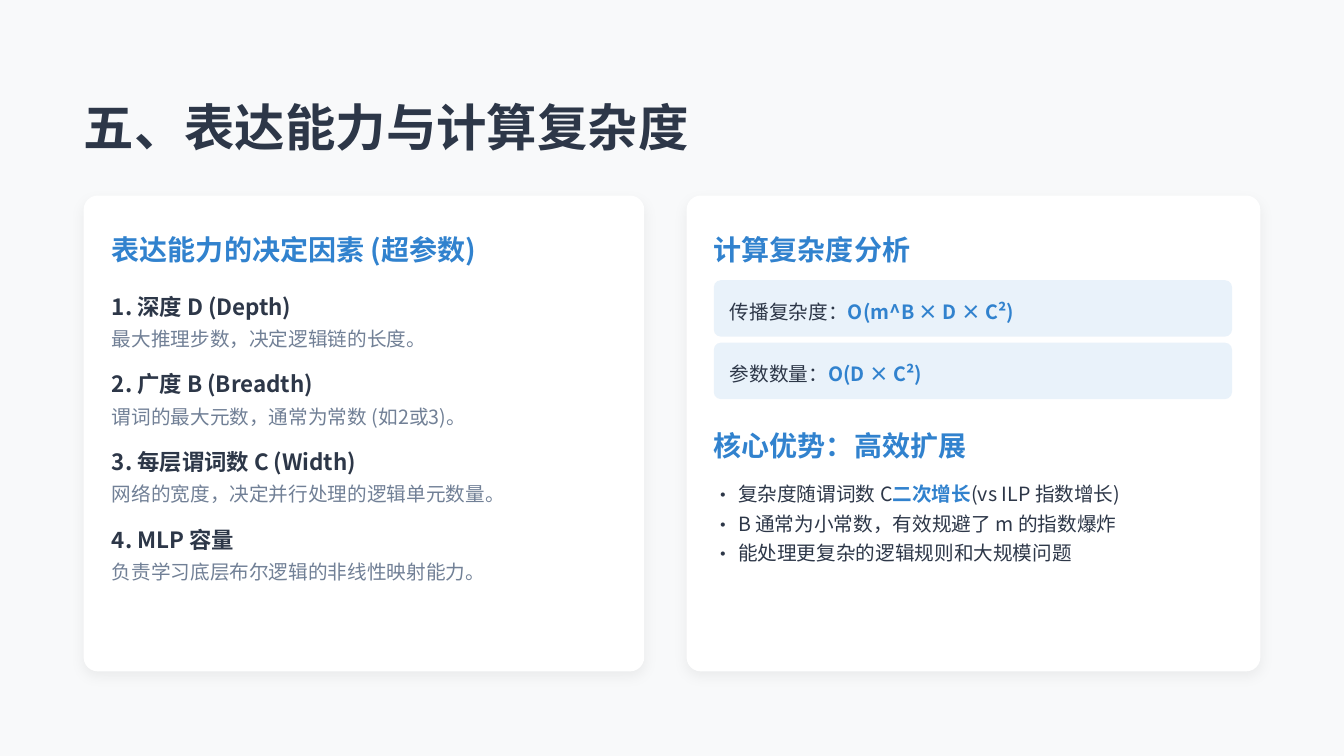
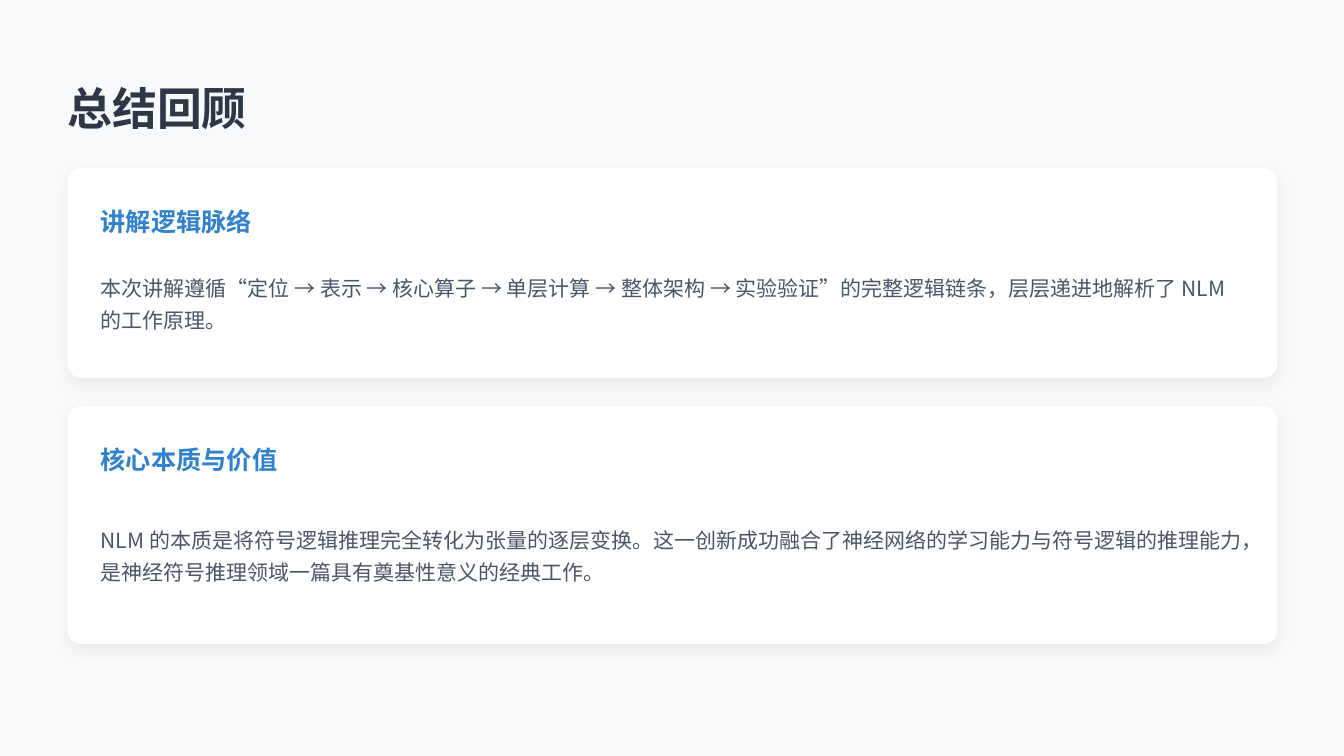
from dataclasses import dataclass
from typing import Any

from lxml import etree
from pptx import Presentation
from pptx.dml import color
from pptx.enum import shapes, text
from pptx.oxml import ns
from pptx.util import Inches, Pt

FONT = "Noto Sans CJK SC"
PAPER = color.RGBColor(0xF8, 0xF9, 0xFA)
WHITE = color.RGBColor(0xFF, 0xFF, 0xFF)
INK = color.RGBColor(0x2D, 0x37, 0x48)
BLUE = color.RGBColor(0x31, 0x82, 0xCE)
SLATE = color.RGBColor(0x4A, 0x55, 0x68)
GREY = color.RGBColor(0x71, 0x80, 0x96)
CARD_RADIUS = 0.14
STRIP_RADIUS = 0.07
BULLET_INDENT = 0.24
FRAME_FORMAT = {
    "word_wrap": True,
    "vertical_anchor": text.MSO_ANCHOR.MIDDLE,
    "margin_left": 0,
    "margin_top": 0,
    "margin_right": 0,
    "margin_bottom": 0,
}


@dataclass(frozen=True)
class Area:
    left: float
    top: float
    width: float
    height: float

    def lengths(self) -> list[int]:
        return [Inches(side) for side in (self.left, self.top, self.width, self.height)]


@dataclass(frozen=True)
class Style:
    size: int
    ink: color.RGBColor
    bold: bool = False


@dataclass(frozen=True)
class Span:
    words: str
    style: Style


@dataclass(frozen=True)
class Factor:
    name: str
    meaning: str


@dataclass(frozen=True)
class Measure:
    label: str
    formula: str


@dataclass(frozen=True)
class Summary:
    card: Area
    heading: str
    body: str


Line = list[Span]

TITLE = Style(36, INK, True)
SUMMARY_TITLE = Style(32, INK, True)
HEADING = Style(20, BLUE, True)
SUMMARY_HEADING = Style(18, BLUE, True)
FACTOR_NAME = Style(16, INK, True)
FACTOR_MEANING = Style(14, GREY)
PLAIN = Style(14, INK)
STRONG = Style(14, BLUE, True)
BODY = Style(15, SLATE)

FACTORS = [
    Factor("深度 D (Depth)", "最大推理步数，决定逻辑链的长度。"),
    Factor("广度 B (Breadth)", "谓词的最大元数，通常为常数 (如2或3)。"),
    Factor("每层谓词数 C (Width)", "网络的宽度，决定并行处理的逻辑单元数量。"),
    Factor("MLP 容量", "负责学习底层布尔逻辑的非线性映射能力。"),
]
MEASURES = [
    Measure("传播复杂度：", "O(m^B × D × C²)"),
    Measure("参数数量：", "O(D × C²)"),
]
ADVANTAGES: list[Line] = [
    [
        Span("复杂度随谓词数 C", PLAIN),
        Span("二次增长", STRONG),
        Span("(vs ILP 指数增长)", PLAIN),
    ],
    [Span("B 通常为小常数，有效规避了 m 的指数爆炸", PLAIN)],
    [Span("能处理更复杂的逻辑规则和大规模问题", PLAIN)],
]
SUMMARIES = [
    Summary(
        Area(0.67, 1.67, 12, 2.08),
        "讲解逻辑脉络",
        "本次讲解遵循“定位 → 表示 → 核心算子 → 单层计算 → 整体架构 → 实验验证”"
        "的完整逻辑链条，层层递进地解析了 NLM 的工作原理。",
    ),
    Summary(
        Area(0.67, 4.03, 12, 2.36),
        "核心本质与价值",
        "NLM 的本质是将符号逻辑推理完全转化为张量的逐层变换。"
        "这一创新成功融合了神经网络的学习能力与符号逻辑的推理能力，"
        "是神经符号推理领域一篇具有奠基性意义的经典工作。",
    ),
]


def set_values(target: Any, values: dict[str, Any]) -> None:
    for name, value in values.items():
        setattr(target, name, value)


def add_element(parent: Any, tag: str, **values: Any) -> Any:
    attributes = {name: str(value) for name, value in values.items()}
    return etree.SubElement(parent, ns.qn(tag), attributes)


def add_bullet(para: Any) -> None:
    properties = para._p.get_or_add_pPr()
    properties.set("marL", str(Inches(BULLET_INDENT)))
    properties.set("indent", str(-Inches(BULLET_INDENT)))
    add_element(properties, "a:buFont", typeface=FONT)
    add_element(properties, "a:buChar", char="•")


def write_lines(frame: Any, lines: list[Line], bulleted: bool = False) -> None:
    set_values(frame, FRAME_FORMAT)
    for index, line in enumerate(lines):
        para = frame.add_paragraph() if index else frame.paragraphs[0]
        set_values(para, {"line_spacing": 1.25, "alignment": text.PP_ALIGN.LEFT})
        if bulleted:
            add_bullet(para)
        for span in line:
            run = para.add_run()
            run.text = span.words
            style = span.style
            run.font.color.rgb = style.ink
            set_values(run.font, {"name": FONT, "size": Pt(style.size), "bold": style.bold})
            add_element(run.font._element, "a:ea", typeface=FONT)


def add_text(page: Any, area: Area, words: str, style: Style) -> None:
    box = page.shapes.add_textbox(*area.lengths())
    write_lines(box.text_frame, [[Span(words, style)]])


def add_panel(page: Any, area: Area, fill: color.RGBColor, radius: float) -> Any:
    panel = page.shapes.add_shape(shapes.MSO_SHAPE.ROUNDED_RECTANGLE, *area.lengths())
    panel.adjustments[0] = radius / min(area.width, area.height)
    panel.fill.solid()
    panel.fill.fore_color.rgb = fill
    panel.line.fill.background()
    panel.shadow.inherit = False
    return panel


def add_card(page: Any, area: Area) -> None:
    card = add_panel(page, area, WHITE, CARD_RADIUS)
    effects = card._element.spPr.find(ns.qn("a:effectLst"))
    shadow = add_element(
        effects, "a:outerShdw", blurRad=Pt(10), dist=Pt(4), dir=90 * 60000,
        algn="ctr", rotWithShape=0,
    )
    shade = add_element(shadow, "a:srgbClr", val="000000")
    add_element(shade, "a:alpha", val=5000)


def add_measure(page: Any, area: Area, measure: Measure) -> None:
    strip = add_panel(page, area, BLUE, STRIP_RADIUS)
    tint = strip._element.spPr.find(ns.qn("a:solidFill")).find(ns.qn("a:srgbClr"))
    add_element(tint, "a:alpha", val=10000)
    line = [Span(measure.label, PLAIN), Span(measure.formula, STRONG)]
    write_lines(strip.text_frame, [line])
    strip.text_frame.margin_left = Inches(0.14)


def add_page(deck: Any, title: str, area: Area, style: Style) -> Any:
    page = deck.slides.add_slide(deck.slide_layouts[6])
    page.background.fill.solid()
    page.background.fill.fore_color.rgb = PAPER
    add_text(page, area, title, style)
    return page


def build_complexity(deck: Any) -> None:
    page = add_page(deck, "五、表达能力与计算复杂度", Area(0.83, 0.83, 11.67, 0.69), TITLE)

    left, width = 1.11, 5
    add_card(page, Area(0.83, 1.94, 5.56, 4.72))
    add_text(page, Area(left, 2.22, width, 0.42), "表达能力的决定因素 (超参数)", HEADING)
    for index, factor in enumerate(FACTORS):
        top = 2.84 + index * 0.77
        add_text(page, Area(left, top, width, 0.33), f"{index + 1}. {factor.name}", FACTOR_NAME)
        add_text(page, Area(left, top + 0.35, width, 0.28), factor.meaning, FACTOR_MEANING)

    left, width = 7.08, 5.14
    add_card(page, Area(6.81, 1.94, 5.69, 4.72))
    add_text(page, Area(left, 2.22, width, 0.42), "计算复杂度分析", HEADING)
    for index, measure in enumerate(MEASURES):
        add_measure(page, Area(left, 2.78 + index * 0.62, width, 0.56), measure)
    add_text(page, Area(left, 4.17, width, 0.42), "核心优势：高效扩展", HEADING)
    box = page.shapes.add_textbox(*Area(left, 4.65, width, 1.03).lengths())
    write_lines(box.text_frame, ADVANTAGES, bulleted=True)


def build_summary(deck: Any) -> None:
    page = add_page(deck, "总结回顾", Area(0.67, 0.67, 12, 0.67), SUMMARY_TITLE)
    for summary in SUMMARIES:
        card = summary.card
        left, width = card.left + 0.33, card.width - 0.67
        add_card(page, card)
        add_text(page, Area(left, card.top + 0.28, width, 0.42), summary.heading, SUMMARY_HEADING)
        body = Area(left, card.top + 0.76, width, card.height - 0.97)
        add_text(page, body, summary.body, BODY)


def main() -> None:
    deck = Presentation()
    set_values(deck, {"slide_width": Inches(13.33), "slide_height": Inches(7.5)})
    build_complexity(deck)
    build_summary(deck)
    deck.save("out.pptx")


if __name__ == "__main__":
    main()
